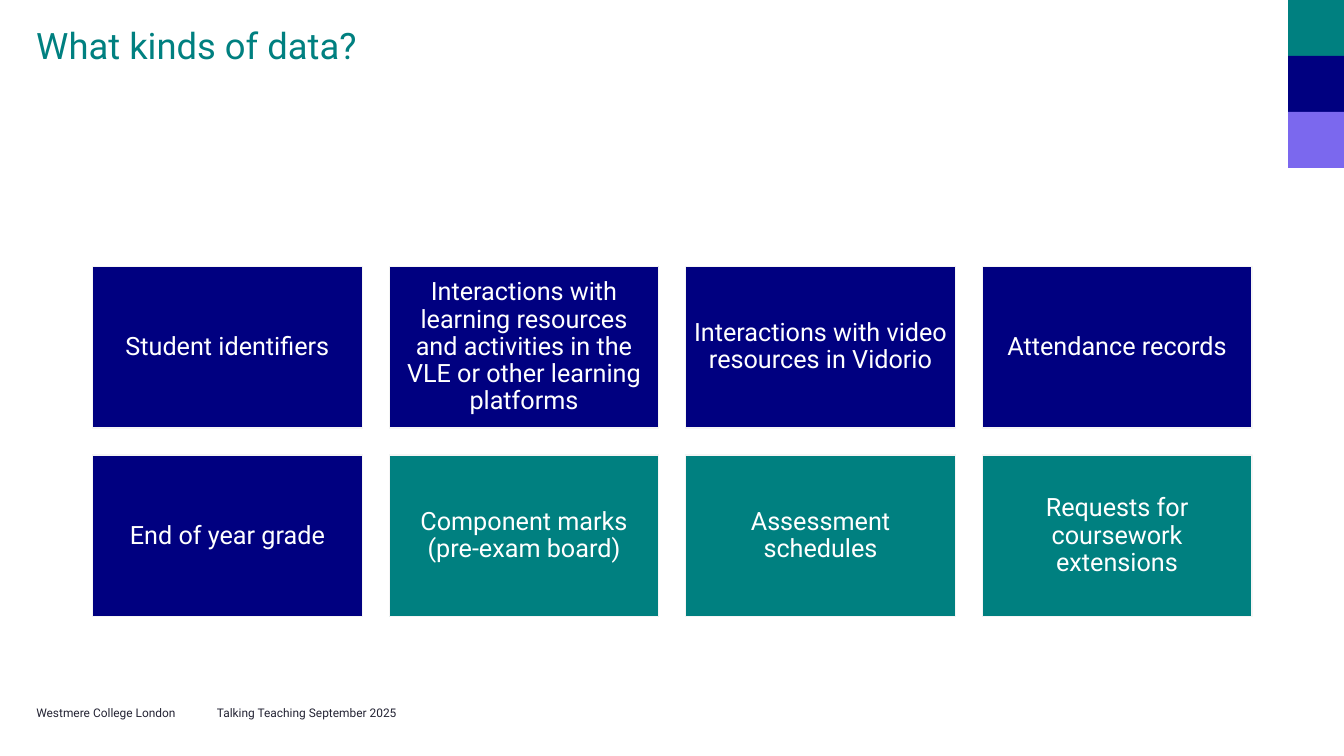
from pptx import Presentation
from pptx.dml.color import RGBColor
from pptx.enum.shapes import MSO_SHAPE
from pptx.enum.text import MSO_ANCHOR, PP_ALIGN
from pptx.util import Pt

RECTANGLE = MSO_SHAPE.RECTANGLE
TOP, MIDDLE, BOTTOM = MSO_ANCHOR.TOP, MSO_ANCHOR.MIDDLE, MSO_ANCHOR.BOTTOM
LEFT, CENTER = PP_ALIGN.LEFT, PP_ALIGN.CENTER

NAVY = RGBColor(0x00, 0x00, 0x80)
TEAL = RGBColor(0x00, 0x80, 0x80)
VIOLET = RGBColor(0x7B, 0x68, 0xEE)
INK = RGBColor(0x23, 0x23, 0x33)
WHITE = RGBColor(0xFF, 0xFF, 0xFF)
PALE = RGBColor(0xF5, 0xF5, 0xF5)

TITLE = {"size": 26, "color": TEAL, "anchor": TOP, "align": LEFT, "inset": 0, "spacing": 0.9}
FOOTER = {"size": 8.5, "color": INK, "anchor": BOTTOM, "align": LEFT, "inset": 0, "spacing": 1.0}
LABEL = {"size": 18, "color": WHITE, "anchor": MIDDLE, "align": CENTER, "inset": 5.4, "spacing": 0.9}

COLUMNS = 4
GAP_SHARE = 0.1
HEIGHT_SHARE = 0.6
DATA_KINDS = [
    ("Student identifiers", NAVY),
    ("Interactions with learning resources and activities in the VLE or other learning platforms", NAVY),
    ("Interactions with video resources in Vidorio", NAVY),
    ("Attendance records", NAVY),
    ("End of year grade", NAVY),
    ("Component marks (pre-exam board)", TEAL),
    ("Assessment schedules", TEAL),
    ("Requests for coursework extensions", TEAL),
]


def write_text(shape, text, style):
    """Put one styled paragraph into a shape."""
    frame = shape.text_frame
    inset = Pt(style["inset"])
    settings = {
        "word_wrap": True, "vertical_anchor": style["anchor"],
        "margin_left": inset, "margin_right": inset,
        "margin_top": inset, "margin_bottom": inset,
    }
    for name, value in settings.items():
        setattr(frame, name, value)
    para = frame.paragraphs[0]
    para.alignment = style["align"]
    para.line_spacing = style["spacing"]
    span = para.add_run()
    span.text = text
    for name, value in {"name": "Roboto", "size": Pt(style["size"])}.items():
        setattr(span.font, name, value)
    span.font.color.rgb = style["color"]


def add_text(page, box, text, style):
    """Add a text box at the given left, top, width and height."""
    write_text(page.shapes.add_textbox(*map(Pt, box)), text, style)


def add_block(page, box, color):
    """Add a filled rectangle without outline or shadow."""
    block = page.shapes.add_shape(RECTANGLE, *map(Pt, box))
    block.shadow.inherit = False
    block.fill.solid()
    block.fill.fore_color.rgb = color
    block.line.fill.background()
    return block


def add_stripe(page, left, top, side):
    """Stack the coloured corner squares downwards."""
    for row, color in enumerate((TEAL, NAVY, VIOLET)):
        add_block(page, (left, top + row * side, side, side), color)


def add_tiles(page, left, top, width):
    """Lay out the kinds of data as a grid across the given width."""
    tile_width = width / (COLUMNS + (COLUMNS - 1) * GAP_SHARE)
    tile_height = tile_width * HEIGHT_SHARE
    gap = tile_width * GAP_SHARE
    for index, (text, color) in enumerate(DATA_KINDS):
        row, column = divmod(index, COLUMNS)
        x = left + column * (tile_width + gap)
        y = top + row * (tile_height + gap)
        tile = add_block(page, (x, y, tile_width, tile_height), color)
        tile.line.color.rgb = PALE
        tile.line.width = Pt(1)
        write_text(tile, text, LABEL)


def add_footer(page, left, top, height):
    """Write the college name and the event name on one line."""
    add_text(page, (left, top, 112, height), "Westmere College London", FOOTER)
    add_text(page, (left + 129, top, 269, height), "Talking Teaching September 2025", FOOTER)


def main():
    """Build the slide and save the deck."""
    deck = Presentation()
    deck.slide_width, deck.slide_height = Pt(960), Pt(540)
    page = deck.slides.add_slide(deck.slide_layouts[6])
    add_stripe(page, 920, 0, 40)
    add_text(page, (25.9, 20, 880, 29.5), "What kinds of data?", TITLE)
    add_tiles(page, 66.2, 190.2, 828)
    add_footer(page, 25.9, 503.3, 10.8)
    deck.save("out.pptx")


if __name__ == "__main__":
    main()
